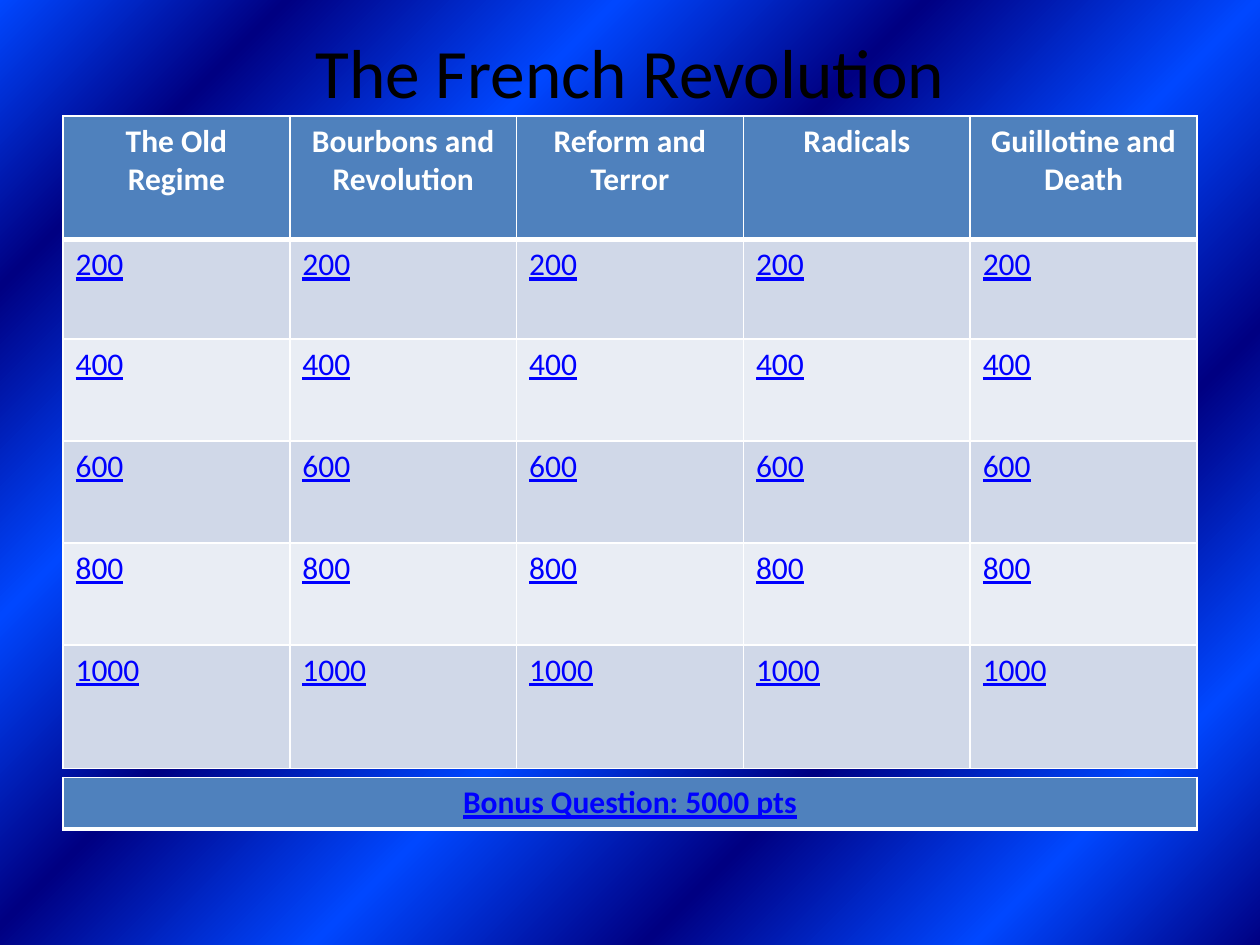
from lxml.etree import SubElement
from pptx import Presentation
from pptx.dml.color import RGBColor
from pptx.enum.text import MSO_ANCHOR, PP_ALIGN
from pptx.oxml import parse_xml
from pptx.oxml.ns import nsdecls, qn
from pptx.util import Inches, Pt

WIDTH, HEIGHT = 10, 7.5
MARGIN = WIDTH * 0.05
INNER = WIDTH - 2 * MARGIN
WHITE, BLUE, HEADER = "FFFFFF", "0000FF", "4F81BD"
BANDS = ["D0D8E8", "E9EDF4"]
STOPS = [0, 13, 28, 43, 58, 72, 87, 100]
STOP_COLORS = ["000082", "0047FF"]
TOPICS = ["The Old Regime", "Bourbons and Revolution", "Reform and Terror",
          "Radicals", "Guillotine and Death"]
POINTS = [200, 400, 600, 800, 1000]
ROW_HEIGHTS = [0.98, 0.79, 0.81, 0.81, 0.81, 0.98]

TITLE_FONT = {"size": Pt(39.6), "name": "Calibri"}
HEAD_FONT = {"size": Pt(18), "name": "Calibri", "bold": True}
LINK_FONT = {"size": Pt(18), "name": "Calibri", "bold": False, "underline": True}
BONUS_FONT = {**LINK_FONT, "bold": True}


def rgb(value):
    return RGBColor.from_string(value)


def write(tf, text, fmt, color, align):
    p = tf.paragraphs[0]
    p.alignment = align
    r = p.add_run()
    r.text = text
    for name, value in fmt.items():
        setattr(r.font, name, value)
    r.font.color.rgb = rgb(color)


def paint_background(s):
    s.background.fill.solid()
    stops = "".join(
        f'<a:gs pos="{pos * 1000}"><a:srgbClr val="{STOP_COLORS[i % 2]}"/></a:gs>'
        for i, pos in enumerate(STOPS))
    gradient = parse_xml(
        f'<a:gradFill {nsdecls("a")} rotWithShape="1"><a:gsLst>{stops}</a:gsLst>'
        '<a:path path="circle"><a:fillToRect l="100000" t="100000"/></a:path>'
        '<a:tileRect r="-100000" b="-100000"/></a:gradFill>')
    bg = s._element.find(".//" + qn("p:bgPr"))
    bg.replace(bg[0], gradient)


def add_title(s, box, text):
    tf = s.shapes.add_textbox(*map(Inches, box)).text_frame
    tf.word_wrap = True
    tf.vertical_anchor = MSO_ANCHOR.MIDDLE
    write(tf, text, TITLE_FONT, "000000", PP_ALIGN.CENTER)


def style_cell(cell, fill, top=1, bottom=1):
    tcPr = cell._tc.get_or_add_tcPr()
    for side, width in {"L": 1, "R": 1, "T": top, "B": bottom}.items():
        ln = SubElement(tcPr, qn(f"a:ln{side}"), w=str(Pt(width)))
        SubElement(SubElement(ln, qn("a:solidFill")), qn("a:srgbClr"), val=WHITE)
    cell.fill.solid()
    cell.fill.fore_color.rgb = rgb(fill)


def add_grid(s, box, heights, columns):
    table = s.shapes.add_table(len(heights), columns, *map(Inches, box)).table
    for row, height in zip(table.rows, heights):
        row.height = Inches(height)
    return table


def add_board(s, box):
    table = add_grid(s, box, ROW_HEIGHTS, len(TOPICS))
    for col, topic in enumerate(TOPICS):
        head = table.cell(0, col)
        style_cell(head, HEADER, bottom=3)
        write(head.text_frame, topic, HEAD_FONT, WHITE, PP_ALIGN.CENTER)
        for i, points in enumerate(POINTS):
            cell = table.cell(i + 1, col)
            style_cell(cell, BANDS[i % 2], top=1 if i else 3)
            write(cell.text_frame, str(points), LINK_FONT, BLUE, PP_ALIGN.LEFT)


def add_bonus(s, box):
    cell = add_grid(s, box, [box[3]], 1).cell(0, 0)
    style_cell(cell, HEADER, bottom=3)
    write(cell.text_frame, "Bonus Question: 5000 pts", BONUS_FONT, BLUE,
          PP_ALIGN.CENTER)


def main():
    prs = Presentation()
    prs.slide_width, prs.slide_height = Inches(WIDTH), Inches(HEIGHT)
    s = prs.slides.add_slide(prs.slide_layouts[6])
    paint_background(s)
    add_title(s, (MARGIN, HEIGHT * 0.04, INNER, 0.53), "The French Revolution")
    add_board(s, (MARGIN, 0.92, INNER, sum(ROW_HEIGHTS)))
    add_bonus(s, (MARGIN, 6.17, INNER, 0.41))
    prs.save("out.pptx")


if __name__ == "__main__":
    main()
